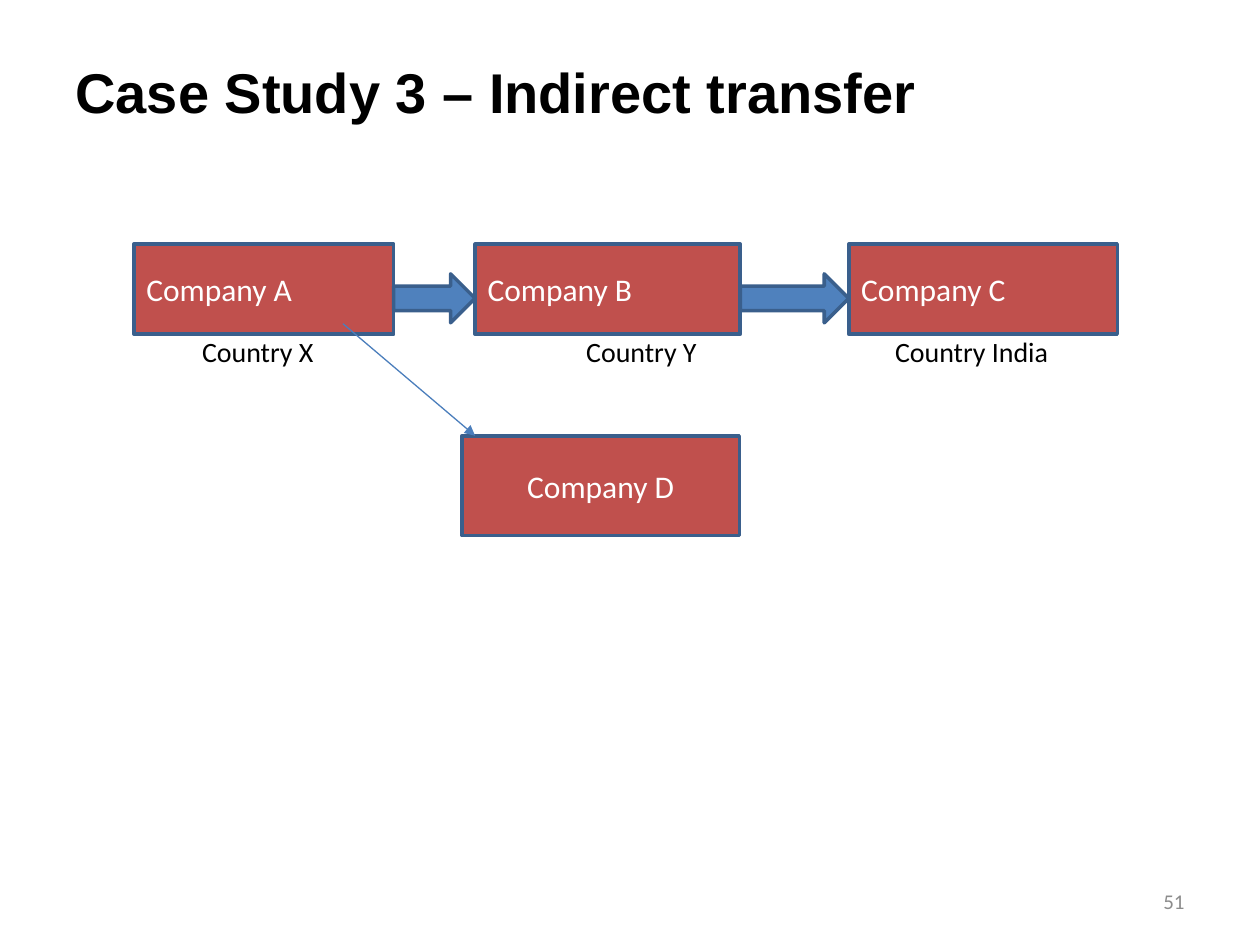
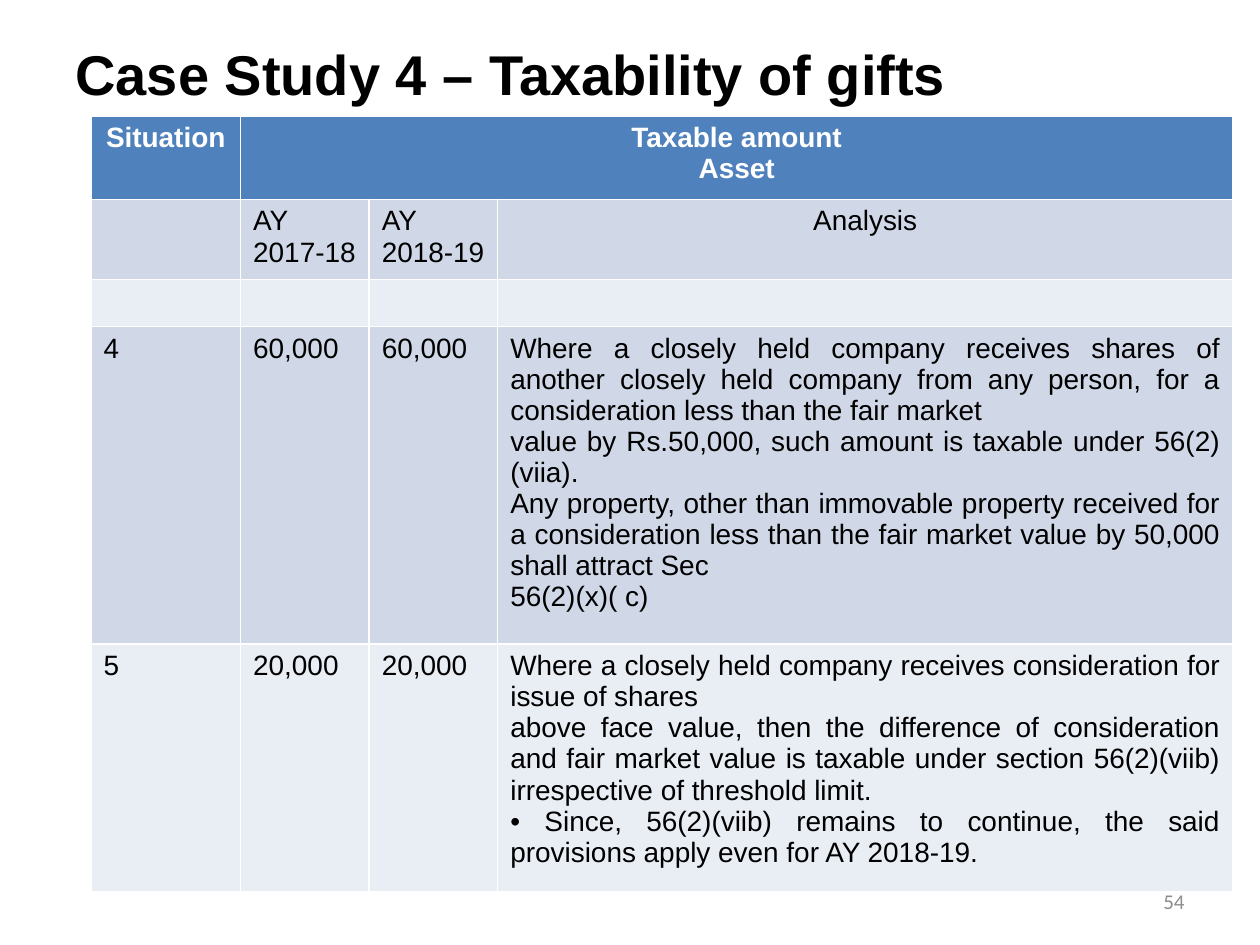
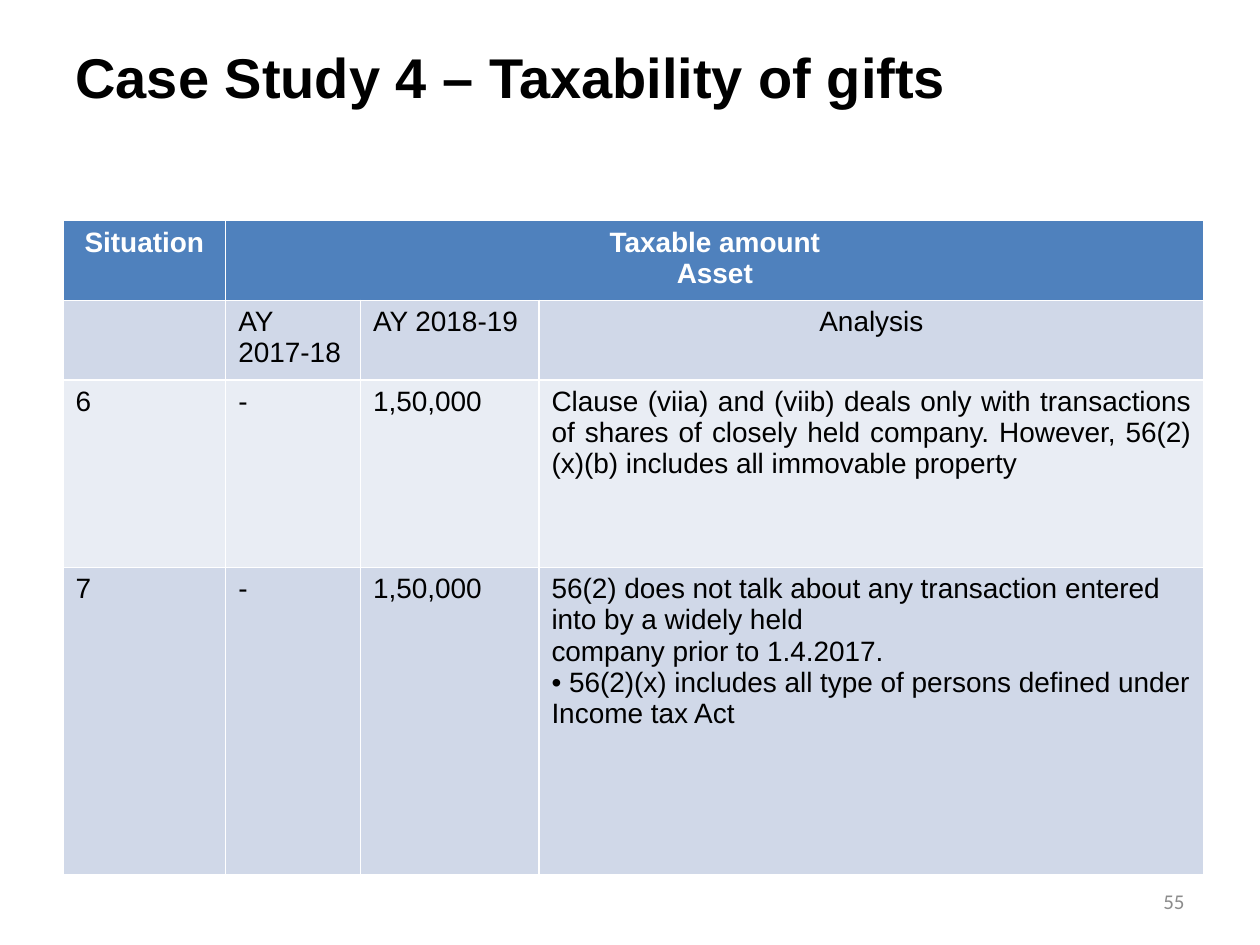
from lxml import etree
from pptx import Presentation
from pptx.dml.color import RGBColor
from pptx.enum.shapes import MSO_CONNECTOR as LINE, MSO_SHAPE as FORM
from pptx.enum.text import MSO_ANCHOR as ANCHOR, PP_ALIGN as ALIGN
from pptx.oxml.ns import qn
from pptx.util import Pt

BLACK, WHITE, GREY = "000000", "FFFFFF", "8C8C8C"
RED, BLUE, EDGE, THIN = "C0504D", "4F81BD", "3A5F8C", "4B7EBC"
BANDS = ("D0D8E8", "E9EDF4")
HEAD, BODY = "Arial", "Calibri"

TOP = ["Situation", "Taxable amount\nAsset"]
GIFTS = [
    ["4", "60,000", "60,000",
     "Where a closely held company receives shares of another closely held "
     "company from any person, for a consideration less than the fair market\n"
     "value by Rs.50,000, such amount is taxable under 56(2)(viia).\n"
     "Any property, other than immovable property received for a consideration "
     "less than the fair market value by 50,000 shall attract Sec\n"
     "56(2)(x)( c)"],
    ["5", "20,000", "20,000",
     "Where a closely held company receives consideration for issue of shares\n"
     "above face value, then the difference of consideration and fair market "
     "value is taxable under section 56(2)(viib) irrespective of threshold limit.\n"
     "• Since, 56(2)(viib) remains to continue, the said provisions apply even "
     "for AY 2018-19."],
]
ASSETS = [
    ["6", "-", "1,50,000",
     "Clause (viia) and (viib) deals only with transactions of shares of closely "
     "held company. However, 56(2)(x)(b) includes all immovable property"],
    ["7", "-", "1,50,000",
     "56(2) does not talk about any transaction entered into by a widely held\n"
     "company prior to 1.4.2017.\n"
     "• 56(2)(x) includes all type of persons defined under Income tax Act"],
]


def rgb(code):
    return RGBColor.from_string(code)


def write(frame, text, size, face, color, align=ALIGN.LEFT, bold=False):
    frame.text = text
    frame.word_wrap = True
    for para in frame.paragraphs:
        para.alignment = align
        font = para.font
        font.size, font.name, font.bold = Pt(size), face, bold
        font.color.rgb = rgb(color)


def add_text(slide, box, text, *style, **more):
    frame = slide.shapes.add_textbox(*map(Pt, box)).text_frame
    frame.vertical_anchor = ANCHOR.MIDDLE
    write(frame, text, *style, **more)
    return frame


def add_block(slide, form, box, fill):
    block = slide.shapes.add_shape(form, *map(Pt, box))
    block.shadow.inherit = False
    block.fill.solid()
    block.fill.fore_color.rgb = rgb(fill)
    block.line.color.rgb = rgb(EDGE)
    block.line.width = Pt(2)
    return block


def add_firm(slide, box, name, align=ALIGN.LEFT):
    frame = add_block(slide, FORM.RECTANGLE, box, RED).text_frame
    frame.vertical_anchor = ANCHOR.MIDDLE
    write(frame, name, 18, BODY, WHITE, align)


def add_arrow(slide, start, end):
    line = slide.shapes.add_connector(LINE.STRAIGHT, *map(Pt, start + end))
    line.line.color.rgb = rgb(THIN)
    line.line.width = Pt(0.75)
    etree.SubElement(line.line._get_or_add_ln(), qn("a:tailEnd"), type="triangle")
    etree.SubElement(line._element.spPr, qn("a:effectLst"))


def add_slide(deck, title, depth, number):
    """Start a slide with its title, depth points high, and its number."""
    slide = deck.slides.add_slide(deck.slide_layouts[6])
    add_text(slide, (36, 21.6, 648, depth), title, 32, HEAD, BLACK, bold=True)
    add_text(slide, (516, 500.4, 168, 28.8), str(number), 12, BODY, GREY,
             align=ALIGN.RIGHT)
    return slide


def add_chain(slide, left, top):
    """Draw the chain of firms, with countries below and the side transfer."""
    high, mid = 51.5, top + 31
    firms = [("Company A", 0, 148.5, "Country X", 39),
             ("Company B", 195, 151.5, "Country Y", 63.5),
             ("Company C", 408.5, 153.5, "Country India", 26.5)]
    for name, shift, wide, land, inset in firms:
        x = left + shift
        add_firm(slide, (x, top, wide, high), name)
        frame = add_text(slide, (x + inset, top + high, 100, 20), land,
                         16, BODY, BLACK)
        frame.margin_left = frame.margin_right = 0
        frame.margin_top = frame.margin_bottom = 0
    for (_, shift, wide, *_), after in zip(firms, firms[1:]):
        gap = after[1] - shift - wide
        add_block(slide, FORM.RIGHT_ARROW,
                  (left + shift + wide, mid - 14, gap, 28), BLUE)
    add_firm(slide, (left + 187.5, top + 109.5, 158.5, 57), "Company D",
             ALIGN.CENTER)
    add_arrow(slide, (left + 119.5, top + 45.5), (left + 195, top + 109.5))


def add_grid(slide, left, top, cols, rows, body, aligns):
    """Place the tax table; aligns holds the alignment of each analysis."""
    years = ["", "AY 2017-18", "AY 2018-19", "Analysis"]
    data = [TOP + ["", ""], years] + body
    sides = [ALIGN.CENTER, ALIGN.CENTER] + aligns
    box = map(Pt, (left, top, sum(cols), sum(rows)))
    table = slide.shapes.add_table(len(rows), len(cols), *box).table
    for col, wide in zip(table.columns, cols):
        col.width = Pt(wide)
    for r, (row, high) in enumerate(zip(table.rows, rows)):
        row.height = Pt(high)
        head = r == 0
        for c, cell in enumerate(row.cells):
            cell.fill.solid()
            cell.fill.fore_color.rgb = rgb(BLUE if head else BANDS[(r - 1) % 2])
            side = sides[r] if head or c == 3 else ALIGN.LEFT
            write(cell.text_frame, data[r][c], 16, HEAD,
                  WHITE if head else BLACK, side, head)
    table.cell(0, 1).merge(table.cell(0, 3))


def main():
    deck = Presentation()
    deck.slide_width, deck.slide_height = Pt(720), Pt(540)

    add_chain(add_slide(deck, "Case Study 3 – Indirect transfer", 61, 51),
              76.5, 139.5)

    title = "Case Study 4 – Taxability of gifts"
    add_grid(add_slide(deck, title, 40.5, 54), 52, 66.5,
             [85.5, 73.5, 73.5, 420], [47.5, 43, 27, 181.5, 137],
             [[""] * 4] + GIFTS, [ALIGN.LEFT, ALIGN.JUSTIFY, ALIGN.JUSTIFY])
    add_grid(add_slide(deck, title, 44, 55), 36, 126,
             [93, 77, 102, 380], [44, 42.5, 107, 175.5],
             ASSETS, [ALIGN.JUSTIFY, ALIGN.LEFT])

    deck.save("out.pptx")


if __name__ == "__main__":
    main()
